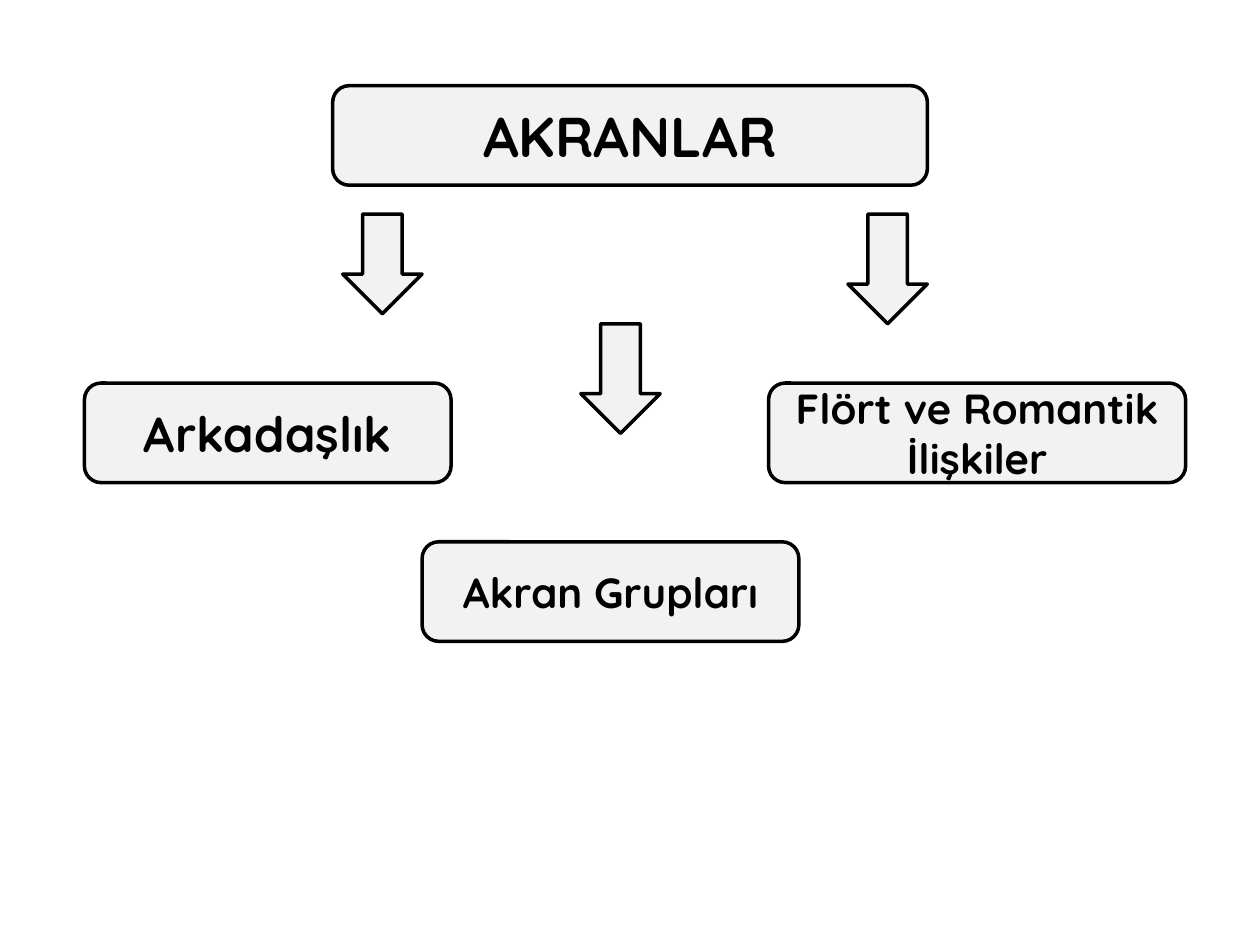
from dataclasses import dataclass

from pptx import Presentation, util as u
from pptx.dml import color as clr
from pptx.enum import shapes, text


@dataclass(frozen=True)
class Theme:
    fill: clr.RGBColor = clr.RGBColor(0xF2, 0xF2, 0xF2)
    ink: clr.RGBColor = clr.RGBColor(0, 0, 0)
    font: str = "Quicksand"
    line: int = 2
    large: int = 32
    mid: int = 28
    small: int = 24


THEME = Theme()
BOX_H = 0.79
ARROW_W = 0.63


def add_form(slide, kind, left, top, width, height):
    form = slide.shapes.add_shape(
        kind, u.Inches(left), u.Inches(top), u.Inches(width), u.Inches(height)
    )
    form.shadow.inherit = False
    form.fill.solid()
    form.fill.fore_color.rgb = THEME.fill
    form.line.color.rgb = THEME.ink
    form.line.width = u.Pt(THEME.line)
    return form


def add_box(slide, label, left, top, width, size):
    box = add_form(
        slide, shapes.MSO_SHAPE.ROUNDED_RECTANGLE, left, top, width, BOX_H
    )
    frame = box.text_frame
    frame.word_wrap = True
    frame.vertical_anchor = text.MSO_ANCHOR.MIDDLE
    frame.text = label
    para = frame.paragraphs[0]
    para.alignment = text.PP_ALIGN.CENTER
    font = para.runs[0].font
    font.name = THEME.font
    font.size = u.Pt(size)
    font.bold = True
    font.color.rgb = THEME.ink


def add_arrow(slide, left, top, height):
    add_form(slide, shapes.MSO_SHAPE.DOWN_ARROW, left, top, ARROW_W, height)


def main():
    deck = Presentation()
    deck.slide_width, deck.slide_height = u.Inches(10), u.Inches(7.5)
    slide = deck.slides.add_slide(deck.slide_layouts[6])

    add_box(slide, "AKRANLAR", 2.64, 0.68, 4.72, THEME.large)
    for left, top, height in (
        (2.72, 1.7, 0.79),
        (6.73, 1.7, 0.87),
        (4.61, 2.57, 0.87),
    ):
        add_arrow(slide, left, top, height)
    for label, left, top, width, size in (
        ("Arkadaşlık", 0.67, 3.04, 2.91, THEME.mid),
        ("Flört ve Romantik İlişkiler", 6.1, 3.04, 3.31, THEME.small),
        ("Akran Grupları", 3.35, 4.3, 2.99, THEME.small),
    ):
        add_box(slide, label, left, top, width, size)

    deck.save("out.pptx")


if __name__ == "__main__":
    main()
